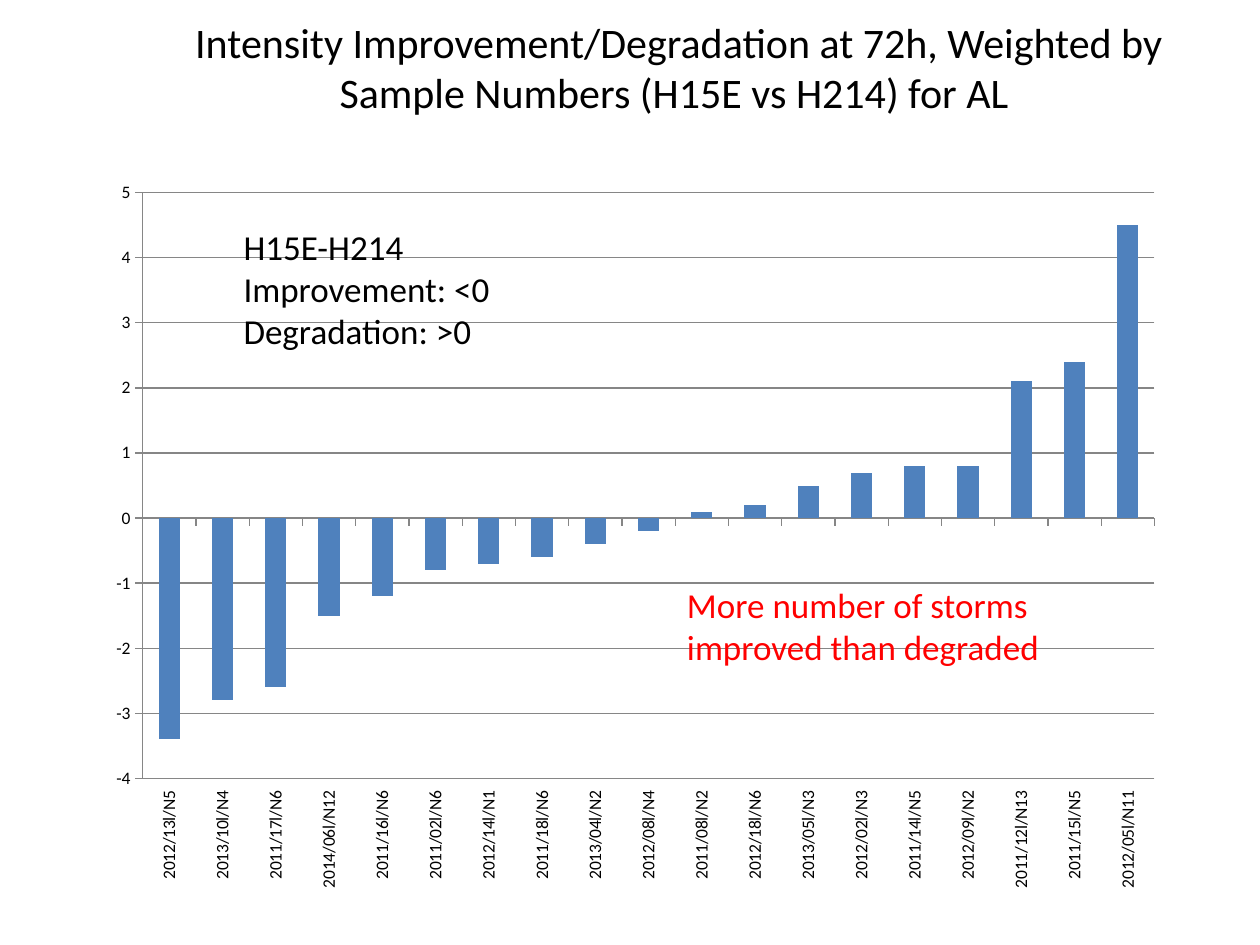
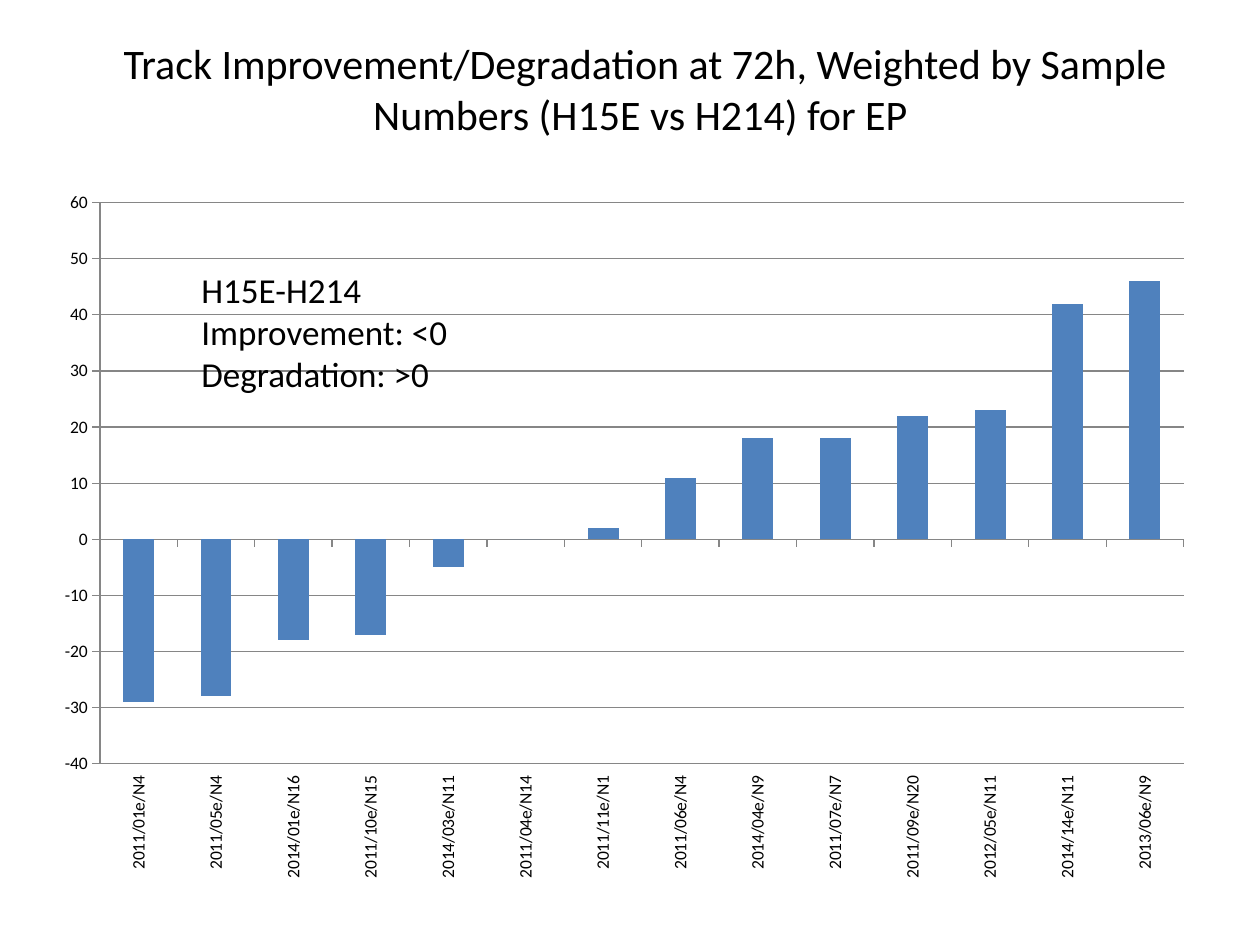
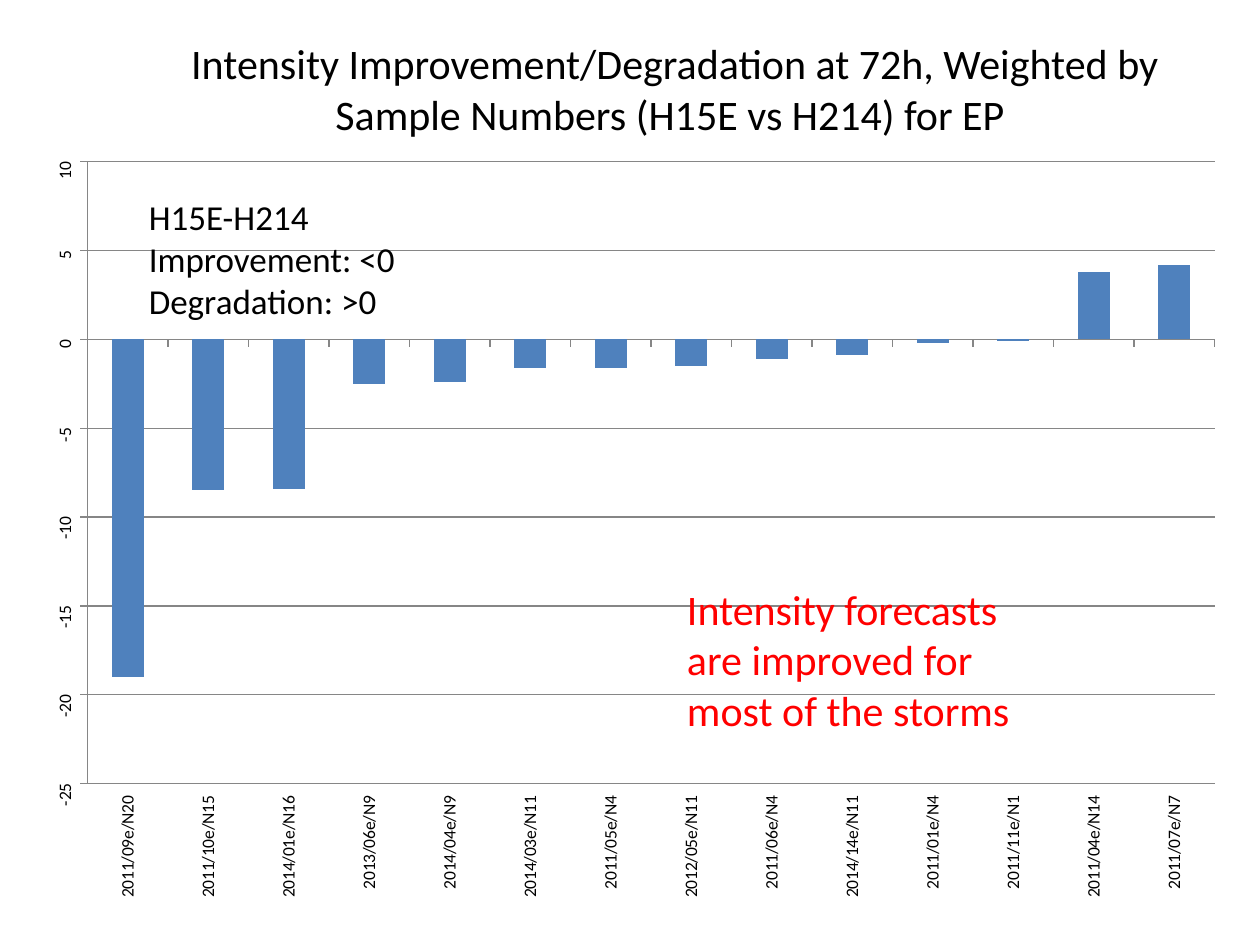
from dataclasses import dataclass

from pptx import Presentation
from pptx.chart.data import CategoryChartData
from pptx.dml.color import RGBColor
from pptx.enum.chart import XL_CHART_TYPE as ChartType
from pptx.enum.chart import XL_TICK_LABEL_POSITION as LabelPosition
from pptx.enum.chart import XL_TICK_MARK as TickMark
from pptx.enum.text import MSO_AUTO_SIZE as AutoSize
from pptx.enum.text import PP_ALIGN as Align
from pptx.oxml.ns import qn
from pptx.util import Cm, Pt


@dataclass(frozen=True)
class Theme:
    font: str = "Calibri"
    ink: RGBColor = RGBColor(0x00, 0x00, 0x00)
    alert: RGBColor = RGBColor(0xFF, 0x00, 0x00)
    bar: RGBColor = RGBColor(0x4F, 0x81, 0xBD)
    grid: RGBColor = RGBColor(0x86, 0x86, 0x86)
    title_size: int = 24
    body_size: int = 20
    axis_size: int = 10
    line_width: float = 0.75


THEME = Theme()
UPRIGHT = "-5400000"
LEGEND = ["H15E-H214", "Improvement: <0", "Degradation: >0"]

ATLANTIC_INTENSITY = {
    "2012/13l/N5": -3.4, "2013/10l/N4": -2.8, "2011/17l/N6": -2.6,
    "2014/06l/N12": -1.5, "2011/16l/N6": -1.2, "2011/02l/N6": -0.8,
    "2012/14l/N1": -0.7, "2011/18l/N6": -0.6, "2013/04l/N2": -0.4,
    "2012/08l/N4": -0.2, "2011/08l/N2": 0.1, "2012/18l/N6": 0.2,
    "2013/05l/N3": 0.5, "2012/02l/N3": 0.7, "2011/14l/N5": 0.8,
    "2012/09l/N2": 0.8, "2011/12l/N13": 2.1, "2011/15l/N5": 2.4,
    "2012/05l/N11": 4.5,
}
PACIFIC_TRACK = {
    "2011/01e/N4": -29, "2011/05e/N4": -28, "2014/01e/N16": -18,
    "2011/10e/N15": -17, "2014/03e/N11": -5, "2011/04e/N14": 0,
    "2011/11e/N1": 2, "2011/06e/N4": 11, "2014/04e/N9": 18,
    "2011/07e/N7": 18, "2011/09e/N20": 22, "2012/05e/N11": 23,
    "2014/14e/N11": 42, "2013/06e/N9": 46,
}
PACIFIC_INTENSITY = {
    "2011/09e/N20": -19, "2011/10e/N15": -8.5, "2014/01e/N16": -8.4,
    "2013/06e/N9": -2.5, "2014/04e/N9": -2.4, "2014/03e/N11": -1.6,
    "2011/05e/N4": -1.6, "2012/05e/N11": -1.5, "2011/06e/N4": -1.1,
    "2014/14e/N11": -0.9, "2011/01e/N4": -0.2, "2011/11e/N1": -0.1,
    "2011/04e/N14": 3.8, "2011/07e/N7": 4.2,
}


def style_font(font, size, color=THEME.ink):
    font.name = THEME.font
    font.size = Pt(size)
    font.color.rgb = color


def style_line(line):
    line.color.rgb = THEME.grid
    line.width = Pt(THEME.line_width)


def add_text(slide, bounds, lines, size, color=THEME.ink, align=Align.LEFT):
    box = slide.shapes.add_textbox(*map(Cm, bounds))
    frame = box.text_frame
    frame.word_wrap = True
    for index, line in enumerate(lines):
        para = frame.add_paragraph() if index else frame.paragraphs[0]
        para.alignment = align
        span = para.add_run()
        span.text = line
        style_font(span.font, size, color)
    return box


def add_title(slide, left, top, measure, basin):
    text = (f" {measure} Improvement/Degradation at 72h, "
            f"Weighted by Sample Numbers (H15E vs H214) for {basin}")
    box = add_text(slide, (left, top, 22.86, 2.31), [text],
                   THEME.title_size, align=Align.CENTER)
    box.text_frame.auto_size = AutoSize.SHAPE_TO_FIT_TEXT


def add_legend(slide, left, top):
    add_text(slide, (left, top, 6.35, 2.77), LEGEND, THEME.body_size)


def add_finding(slide, text, size):
    add_text(slide, (13.6, 11.64, 8.05, 3.18), [text], size, THEME.alert)


def style_axis(axis, upright):
    axis.major_tick_mark = TickMark.OUTSIDE
    axis.minor_tick_mark = TickMark.NONE
    style_line(axis.format.line)
    style_font(axis.tick_labels.font, THEME.axis_size)
    if upright:
        body = axis._element.find(qn("c:txPr")).find(qn("a:bodyPr"))
        body.set("rot", UPRIGHT)
        body.set("vert", "horz")


def add_storm_chart(slide, bounds, storms, scale, upright_values=False):
    data = CategoryChartData()
    data.categories = list(storms)
    data.add_series("Series 1", list(storms.values()))
    chart = slide.shapes.add_chart(
        ChartType.COLUMN_CLUSTERED, *map(Cm, bounds), data).chart
    chart.has_legend = False
    chart.has_title = False
    style_font(chart.font, THEME.axis_size)

    plot = chart.plots[0]
    plot.gap_width = 150
    plot.vary_by_categories = False
    fill = plot.series[0].format.fill
    fill.solid()
    fill.fore_color.rgb = THEME.bar

    style_axis(chart.category_axis, upright=True)
    chart.category_axis.tick_label_position = LabelPosition.LOW

    values = chart.value_axis
    style_axis(values, upright_values)
    values.minimum_scale, values.maximum_scale, values.major_unit = scale
    values.has_major_gridlines = True
    style_line(values.major_gridlines.format.line)


def main():
    deck = Presentation()
    deck.slide_width, deck.slide_height = Cm(25.4), Cm(19.05)
    blank = deck.slide_layouts[6]

    page = deck.slides.add_slide(blank)
    add_storm_chart(page, (1.91, 3.39, 21.8, 14.81), ATLANTIC_INTENSITY, (-4, 5, 1))
    add_title(page, 2.16, 0.21, "Intensity", "AL")
    add_legend(page, 4.66, 4.42)
    add_finding(page, "More number of storms improved than degraded", THEME.body_size)

    page = deck.slides.add_slide(blank)
    add_storm_chart(page, (0.84, 3.6, 23.49, 14.39), PACIFIC_TRACK, (-40, 60, 10))
    add_title(page, 1.48, 0.64, "Track", "EP")
    add_legend(page, 3.81, 5.29)

    page = deck.slides.add_slide(blank)
    add_storm_chart(page, (0.63, 2.95, 24.34, 15.46), PACIFIC_INTENSITY,
                    (-25, 10, 5), upright_values=True)
    add_title(page, 2.08, 0.64, "Intensity", "EP")
    add_legend(page, 2.75, 3.81)
    add_finding(page, "Intensity forecasts are improved for most of the storms",
                THEME.title_size)

    deck.save("out.pptx")


if __name__ == "__main__":
    main()
